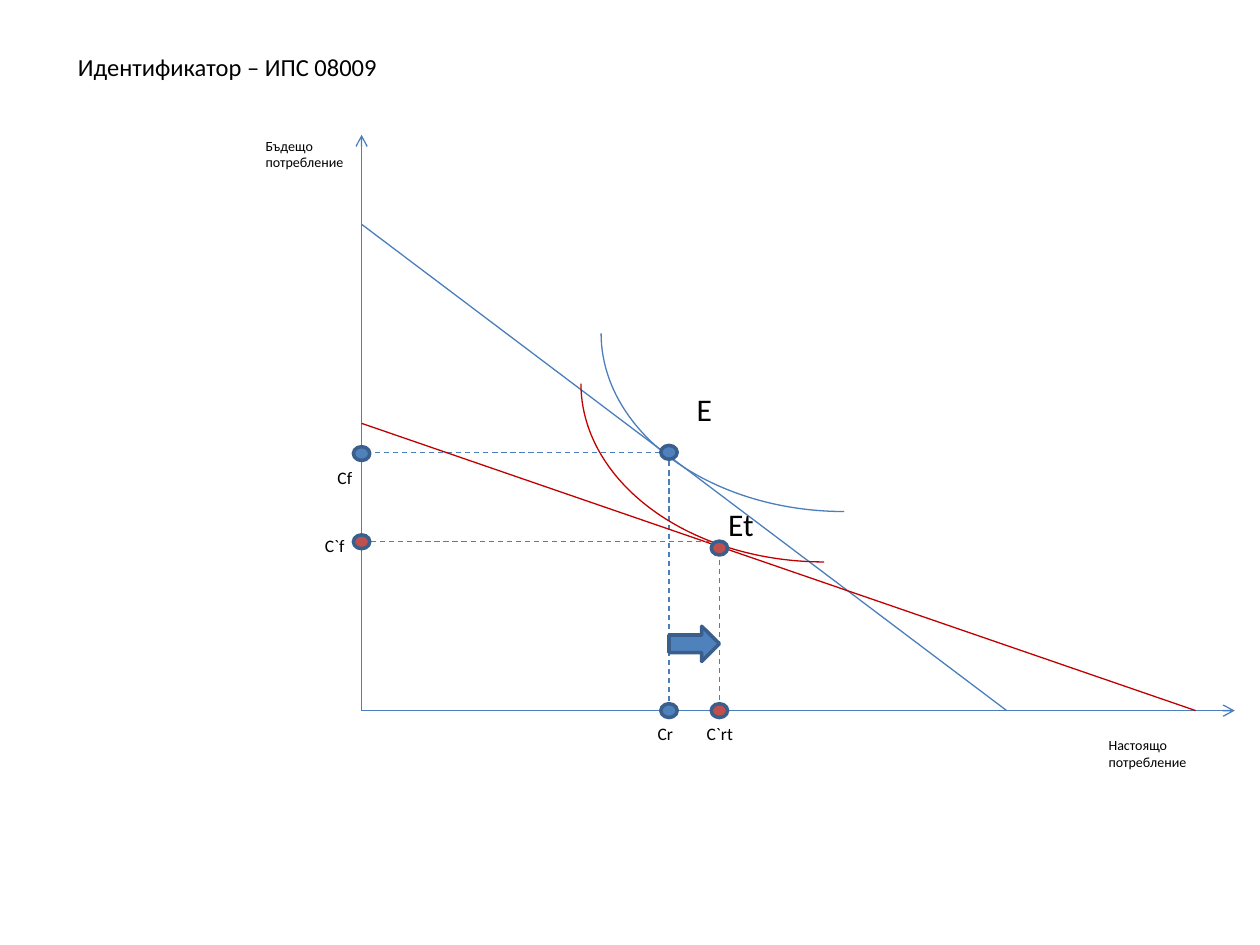
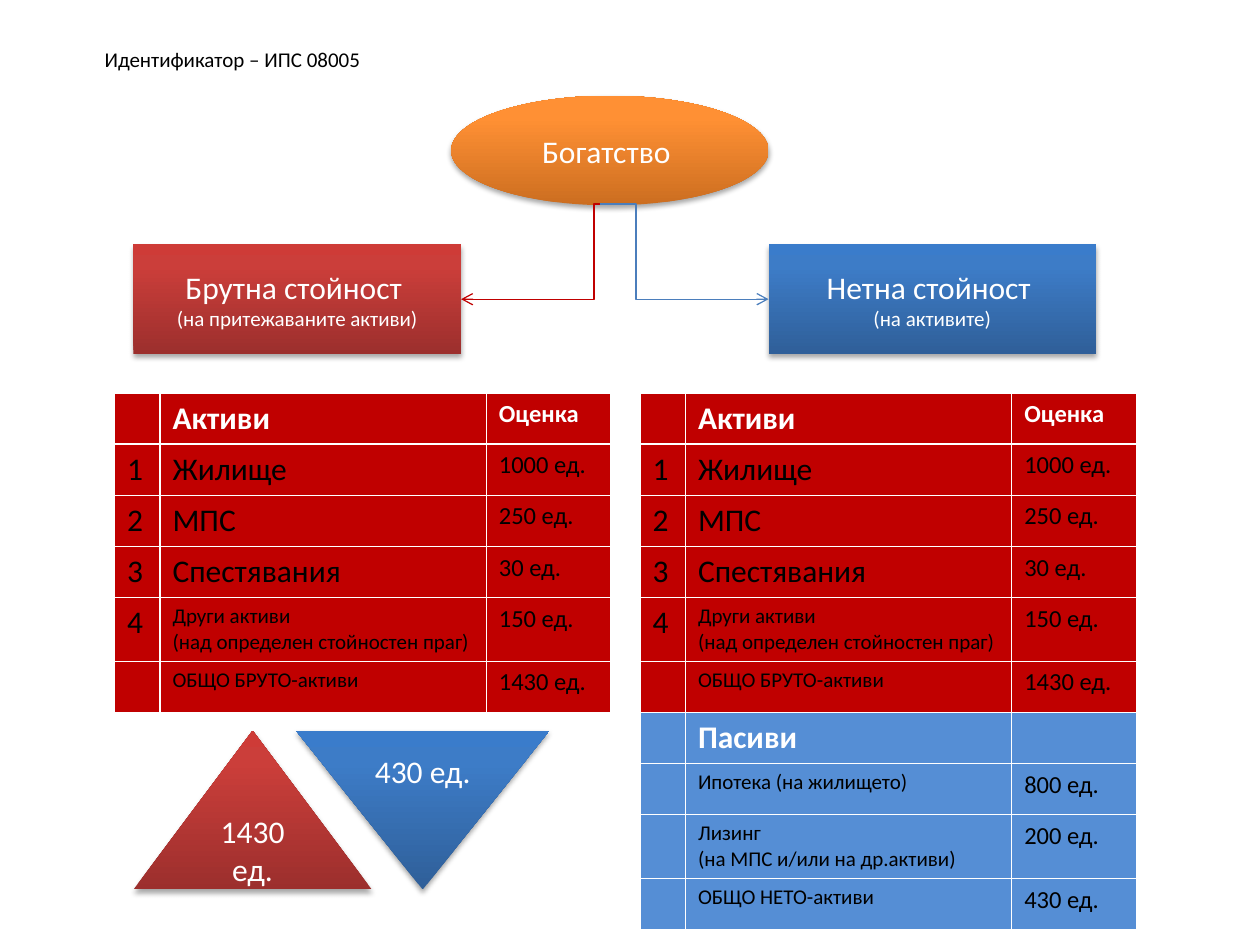
import copy

import lxml.etree
import pptx
import pptx.dml.color
import pptx.enum.dml
import pptx.enum.shapes
import pptx.enum.text
import pptx.oxml
import pptx.oxml.ns
import pptx.util

Inches = pptx.util.Inches
Pt = pptx.util.Pt
qn = pptx.oxml.ns.qn
SHAPE = pptx.enum.shapes.MSO_SHAPE
CONNECTOR = pptx.enum.shapes.MSO_CONNECTOR
ANCHOR = pptx.enum.text.MSO_ANCHOR
ALIGN = pptx.enum.text.PP_ALIGN

FONT = "Calibri"
COLORS = {
    "black": "000000",
    "white": "FFFFFF",
    "line": "4B7EBC",
    "red": "C00000",
    "blue": "558ED5",
    "blue_dot": "4F81BD",
    "red_dot": "C0504D",
    "outline": "3A5F8C",
}
GRADIENTS = {
    "orange": ("CC6E20", "FF9034", "FF9136"),
    "red": ("9C2F2D", "CB3E3A", "CE3B37"),
    "blue": ("2F5F99", "3D7CC7", "3A7CCB"),
}
ASSETS = [
    ("", "Активи", "Оценка"),
    ("1", "Жилище", "1000 ед."),
    ("2", "МПС", "250 ед."),
    ("3", "Спестявания", "30 ед."),
    ("4", "Други активи\n(над определен стойностен праг)", "150 ед."),
    ("", "ОБЩО БРУТО-активи", "1430 ед."),
]
LIABILITIES = [
    ("", "Пасиви", ""),
    ("", "Ипотека (на жилището)", "800 ед."),
    ("", "Лизинг\n(на МПС и/или на др.активи)", "200 ед."),
    ("", "ОБЩО НЕТО-активи", "430 ед."),
]
LARGE_ITEMS = {"Активи", "Жилище", "МПС", "Спестявания", "Пасиви"}


def rgb(value):
    return pptx.dml.color.RGBColor.from_string(value)


def inches(*lengths):
    return [Inches(length) for length in lengths]


def format_paragraph(paragraph, size, color="black", bold=False, align=None):
    paragraph.alignment = align
    for run in paragraph.runs:
        run.font.name = FONT
        run.font.size = Pt(size)
        run.font.bold = bold
        run.font.color.rgb = rgb(COLORS[color])


def add_title_slide(presentation, title, box, size, anchor):
    slide = presentation.slides.add_slide(presentation.slide_layouts[5])
    shape = slide.shapes.title
    shape.left, shape.top, shape.width, shape.height = inches(*box)
    frame = shape.text_frame
    frame.text = title
    frame.word_wrap = True
    frame.auto_size = pptx.enum.text.MSO_AUTO_SIZE.NONE
    frame.vertical_anchor = anchor
    format_paragraph(frame.paragraphs[0], size, align=ALIGN.CENTER)
    return slide


def add_line(slide, start, end, color="line", kind=CONNECTOR.STRAIGHT, dashed=False, arrow=False):
    connector = slide.shapes.add_connector(kind, *inches(*start, *end))
    connector.line.color.rgb = rgb(COLORS[color])
    connector.line.width = Pt(0.75)
    if dashed:
        connector.line.dash_style = pptx.enum.dml.MSO_LINE.DASH
    if arrow:
        tail = lxml.etree.SubElement(connector.line._get_or_add_ln(), qn("a:tailEnd"))
        tail.set("type", "arrow")
    lxml.etree.SubElement(connector._element.spPr, qn("a:effectLst"))
    return connector


def add_elbow(slide, start, box_shape, side, end, color, bend):
    connector = add_line(slide, start, end, color, CONNECTOR.ELBOW, arrow=True)
    connector.end_connect(box_shape, side)
    adjustments = connector._element.find(".//" + qn("a:avLst"))
    guide = lxml.etree.SubElement(adjustments, qn("a:gd"))
    guide.set("name", "adj1")
    guide.set("fmla", f"val {bend}")


def add_flat_shape(slide, kind, box, fill=None, outline="outline", width=2):
    shape = slide.shapes.add_shape(kind, *inches(*box))
    shape.shadow.inherit = False
    if fill:
        shape.fill.solid()
        shape.fill.fore_color.rgb = rgb(COLORS[fill])
    else:
        shape.fill.background()
    shape.line.color.rgb = rgb(COLORS[outline])
    shape.line.width = Pt(width)
    return shape


def add_soft_shadow(shape):
    shape.shadow.inherit = False
    effects = shape._element.spPr.find(qn("a:effectLst"))
    shadow = lxml.etree.SubElement(effects, qn("a:outerShdw"))
    settings = {"blurRad": Pt(3.1), "dist": Pt(1.8), "dir": 5400000, "rotWithShape": 0}
    for name, value in settings.items():
        shadow.set(name, str(int(value)))
    color = lxml.etree.SubElement(shadow, qn("a:srgbClr"))
    color.set("val", COLORS["black"])
    lxml.etree.SubElement(color, qn("a:alpha")).set("val", "35000")


def add_gradient_shape(slide, kind, box, gradient, lines):
    shape = slide.shapes.add_shape(kind, *inches(*box))
    shape.fill.gradient()
    shape.fill.gradient_angle = 90
    stop_list = shape._element.spPr.find(".//" + qn("a:gsLst"))
    stop_list.append(copy.deepcopy(stop_list[-1]))
    for stop, position, color in zip(shape.fill.gradient_stops, (0, 0.8, 1), GRADIENTS[gradient]):
        stop.position = position
        stop.color.rgb = rgb(color)
    shape.line.fill.background()
    add_soft_shadow(shape)
    frame = shape.text_frame
    frame.text = "\n".join(lines)
    frame.word_wrap = True
    frame.vertical_anchor = ANCHOR.MIDDLE
    for paragraph, size in zip(frame.paragraphs, (18, 12)):
        format_paragraph(paragraph, size, "white", align=ALIGN.CENTER)
    return shape


def add_consumption_chart(slide, left, top, width, height):
    def at(x, y):
        return left + x, top + height - y

    equilibrium, taxed = (2.44, 2.05), (2.84, 1.34)

    add_line(slide, at(0, 0), at(width, 0), arrow=True)
    add_line(slide, at(0, 0), at(0, height), arrow=True)

    cases = [
        ("line", 3.86, 5.12, (1.9, 4.41), equilibrium),
        ("red", 2.28, 6.62, (1.74, 4.01), taxed),
    ]
    for color, intercept, reach, corner, (x, y) in cases:
        add_line(slide, at(0, intercept), at(reach, 0), color)
        curve = add_flat_shape(slide, SHAPE.ARC, (*at(*corner), 3.86, 2.83), None, color, 0.75)
        curve.rotation = 180
        add_line(slide, at(x, y), at(x, 0), dashed=True)
        add_line(slide, at(x, y), at(0, y), dashed=True)

    dots = [
        ("red_dot", 2.84, 1.29),
        ("blue_dot", *equilibrium),
        ("blue_dot", 0, 2.04),
        ("red_dot", 0, taxed[1]),
        ("red_dot", 2.84, 0),
        ("blue_dot", 2.44, 0),
    ]
    dot_width, dot_height = 0.13, 0.11
    for color, x, y in dots:
        corner = at(x - dot_width / 2, y + dot_height / 2)
        add_flat_shape(slide, SHAPE.FLOWCHART_CONNECTOR, (*corner, dot_width, dot_height), color)

    labels = [
        ("Бъдещо потребление", -0.86, 4.6, 1.1, 0.37, 8),
        ("Настоящо потребление", 5.83, -0.16, 1.1, 0.37, 8),
        ("С`rt", 2.64, -0.05, 0.47, 0.27, 10),
        ("Сf", -0.29, 1.98, 0.39, 0.27, 10),
        ("С`f", -0.39, 1.44, 0.39, 0.27, 10),
        ("Сr", 2.25, -0.05, 0.39, 0.27, 10),
        ("E", 2.56, 2.59, 0.35, 0.4, 18),
        ("Et", 2.81, 1.68, 0.5, 0.4, 18),
    ]
    for text, x, y, label_width, label_height, size in labels:
        label = slide.shapes.add_textbox(*inches(*at(x, y), label_width, label_height))
        label.text_frame.text = text
        label.text_frame.word_wrap = True
        format_paragraph(label.text_frame.paragraphs[0], size)

    shift = taxed[0] - equilibrium[0]
    add_flat_shape(slide, SHAPE.RIGHT_ARROW, (*at(equilibrium[0], 0.67), shift, 0.28), "blue_dot")


def add_wealth_tree(slide, left, top, width, height):
    box_width, box_height = 2.6, 0.87
    box_top = top + height - box_height
    right_left = left + width - box_width
    middle = box_top + box_height / 2
    stem = top + 0.86
    add_gradient_shape(slide, SHAPE.OVAL, (left + 2.52, top, 2.52, box_height), "orange", ["Богатство "])
    gross = add_gradient_shape(
        slide, SHAPE.RECTANGLE, (left, box_top, box_width, box_height), "red",
        ["Брутна стойност ", "(на притежаваните активи)"])
    net = add_gradient_shape(
        slide, SHAPE.RECTANGLE, (right_left, box_top, box_width, box_height), "blue",
        ["Нетна стойност ", "(на активите)"])
    add_elbow(slide, (left + 3.78, stem), gross, 3, (left + box_width, middle), "red", 10700)
    add_elbow(slide, (left + 3.7, stem), net, 1, (right_left, middle), "line", 21500)


def add_value_table(slide, left, top, sections):
    rows = [(fill, row) for fill, section in sections for row in section]
    widths = (0.36, 2.59, 0.99)
    row_height = 0.4
    frame = slide.shapes.add_table(
        len(rows), len(widths), *inches(left, top, sum(widths), row_height * len(rows)))
    table = frame.table
    table.horz_banding = False
    for column, width in zip(table.columns, widths):
        column.width = Inches(width)
    for row_index, (fill, row) in enumerate(rows):
        heading = row[1] in ("Активи", "Пасиви")
        item_size = 18 if row[1] in LARGE_ITEMS else 12
        table.rows[row_index].height = Inches(row_height)
        for column_index, (text, size) in enumerate(zip(row, (18, item_size, 14))):
            cell = table.cell(row_index, column_index)
            cell.fill.solid()
            cell.fill.fore_color.rgb = rgb(COLORS[fill])
            cell.text_frame.text = text
            for paragraph in cell.text_frame.paragraphs:
                format_paragraph(paragraph, size, "white" if heading else "black", heading)


def add_value_triangles(slide, left, top, height):
    add_gradient_shape(slide, SHAPE.FLOWCHART_EXTRACT, (left, top, 1.89, height), "red", ["1430 ед."])
    add_gradient_shape(slide, SHAPE.FLOWCHART_MERGE, (left + 1.29, top, 2.01, height), "blue", ["430 ед."])


def build_consumption_slide(presentation):
    slide = add_title_slide(
        presentation, "Идентификатор – ИПС 08009", (0.5, 0.3, 2.61, 0.46), 14, ANCHOR.MIDDLE)
    add_consumption_chart(slide, 2.87, 1.07, 6.93, 4.57)


def build_wealth_slide(presentation):
    slide = add_title_slide(
        presentation, "Идентификатор – ИПС 08005", (0.5, 0.3, 2.69, 0.54), 12, ANCHOR.TOP)
    slide.shapes.title.text_frame.margin_top = Inches(0.07)
    add_wealth_tree(slide, 1.06, 0.76, 7.64, 2.05)
    add_value_table(slide, 0.91, 3.12, [("red", ASSETS)])
    add_value_table(slide, 5.08, 3.12, [("red", ASSETS), ("blue", LIABILITIES)])
    add_value_triangles(slide, 1.06, 5.8, 1.26)


def main():
    presentation = pptx.Presentation()
    presentation.slide_width = Inches(10)
    presentation.slide_height = Inches(7.5)
    build_consumption_slide(presentation)
    build_wealth_slide(presentation)
    presentation.save("out.pptx")


if __name__ == "__main__":
    main()
